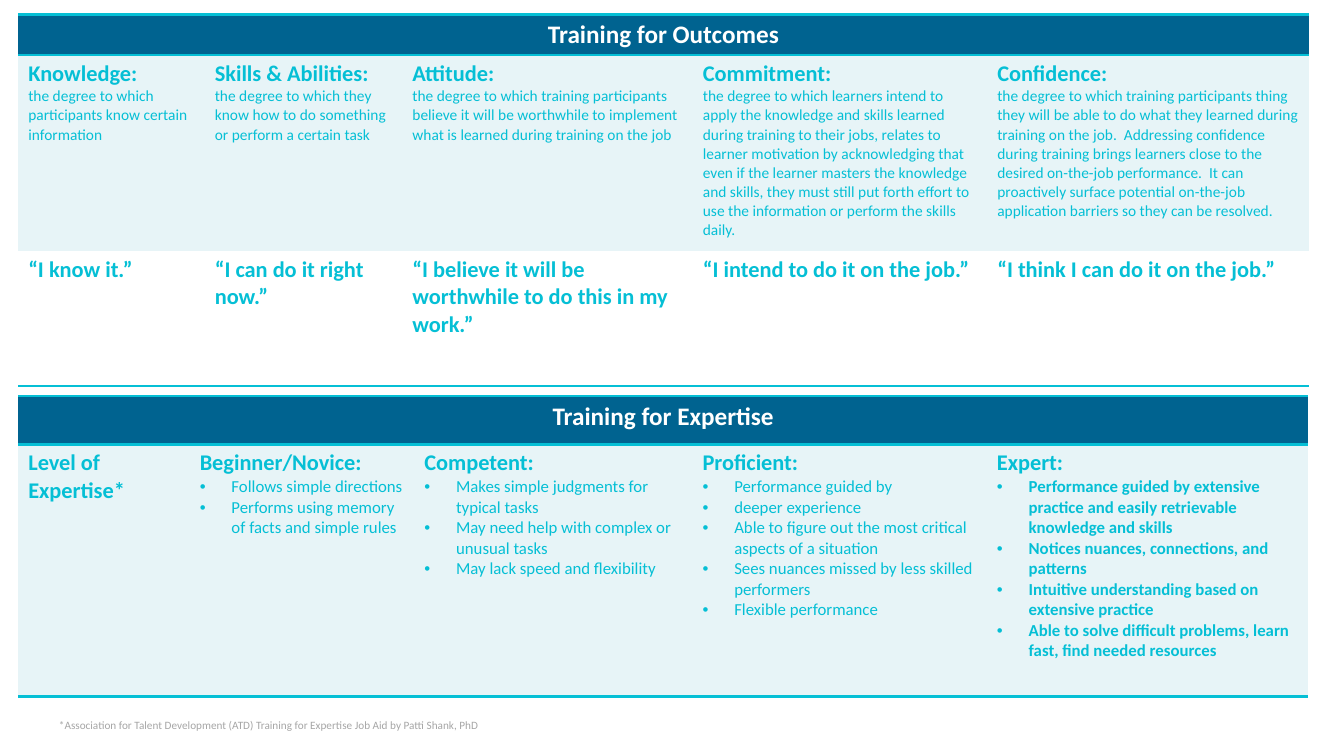
import pptx
import pptx.util
import pptx.dml.color
import pptx.enum.text
import pptx.oxml
import pptx.oxml.ns
from dataclasses import dataclass

Cm = pptx.util.Cm
Pt = pptx.util.Pt
CENTER = pptx.enum.text.PP_ALIGN.CENTER
PLAIN_TABLE = "{2D5ABB26-0587-4C30-8999-92F81FD0307C}"


@dataclass(frozen=True)
class Theme:
    font: str = "Calibri"
    accent: str = "05BFD5"
    header: str = "006390"
    band: str = "E7F4F7"
    white: str = "FFFFFF"
    grey: str = "A6A6A6"
    title: float = 18
    heading: float = 16
    bullet: float = 12
    body: float = 11
    note: float = 8
    rule: float = 2


def rgb(value):
    return pptx.dml.color.RGBColor.from_string(value)


def xml(tag, body="", **attrs):
    """Make one DrawingML element."""
    listed = " ".join(f'{name}="{value}"' for name, value in attrs.items())
    return pptx.oxml.parse_xml(
        f'<a:{tag} {pptx.oxml.ns.nsdecls("a")} {listed}>{body}</a:{tag}>')


class SlideBuilder:
    def __init__(self, prs, theme):
        self.theme = theme
        self.s = prs.slides.add_slide(prs.slide_layouts[6])

    def add_lines(self, tf, lines):
        """Fill a text frame from (text, format) pairs."""
        for i, (text, fmt) in enumerate(lines):
            p = tf.paragraphs[0] if i == 0 else tf.add_paragraph()
            fmt = dict(fmt)
            if fmt.pop("bulleted", False):
                pPr = p._p.get_or_add_pPr()
                pPr.set("marL", str(Cm(0.8)))
                pPr.set("indent", str(-Cm(0.8)))
                pPr.append(xml("buFont", typeface="Arial"))
                pPr.append(xml("buChar", char="•"))
            p.alignment = fmt.pop("align", None)
            r = p.add_run()
            r.text = text
            r.font.color.rgb = rgb(fmt.pop("color", self.theme.accent))
            fmt["name"] = self.theme.font
            for name, value in fmt.items():
                setattr(r.font, name, value)

    def rule(self, cell, *sides):
        """Draw accent borders on the given sides of a cell."""
        fill = f'<a:solidFill><a:srgbClr val="{self.theme.accent}"/></a:solidFill>'
        for side in sides:
            cell._tc.get_or_add_tcPr().append(
                xml(f"ln{side}", fill, w=Pt(self.theme.rule)))

    def table(self, left, top, widths, heights, title, rows):
        """Add a titled table; each row lists the lines of its cells."""
        t = self.theme
        frame = self.s.shapes.add_table(
            len(heights), len(widths), Cm(left), Cm(top),
            Cm(sum(widths)), Cm(sum(heights)))
        tbl = frame.table
        tbl.first_row = tbl.horz_banding = False
        tbl._tbl.tblPr.find(pptx.oxml.ns.qn("a:tableStyleId")).text = PLAIN_TABLE
        for col, width in zip(tbl.columns, widths):
            col.width = Cm(width)
        for row, height in zip(tbl.rows, heights):
            row.height = Cm(height)

        # Borders and fills
        fills = (t.header, t.band, t.white)
        for i in range(len(heights)):
            for j in range(len(widths)):
                cell = tbl.cell(i, j)
                if i == 0:
                    self.rule(cell, "T", "B")
                elif i == len(heights) - 1:
                    self.rule(cell, "B")
                cell.fill.solid()
                cell.fill.fore_color.rgb = rgb(fills[i])

        # Title and contents
        tbl.cell(0, 0).merge(tbl.cell(0, len(widths) - 1))
        self.add_lines(tbl.cell(0, 0).text_frame, [
            (title, dict(size=Pt(t.title), bold=True, color=t.white, align=CENTER))])
        for i, row in enumerate(rows, 1):
            for j, lines in enumerate(row):
                self.add_lines(tbl.cell(i, j).text_frame, lines)

    def note(self, left, top, width, height, text):
        """Add a small centred source note."""
        sp = self.s.shapes.add_textbox(Cm(left), Cm(top), Cm(width), Cm(height))
        sp.text_frame.word_wrap = True
        self.add_lines(sp.text_frame, [
            (text, dict(size=Pt(self.theme.note), color=self.theme.grey, align=CENTER))])


OUTCOMES = [
    ("Knowledge:", "the degree to which participants know certain information",
     "“I know it.”"),
    ("Skills & Abilities:",
     "the degree to which they know how to do something or perform a certain task",
     "“I can do it right now.”"),
    ("Attitude:",
     "the degree to which training participants believe it will be worthwhile to "
     "implement what is learned during training on the job",
     "“I believe it will be worthwhile to do this in my work.”"),
    ("Commitment:",
     "the degree to which learners intend to apply the knowledge and skills learned "
     "during training to their jobs, relates to learner motivation by acknowledging "
     "that even if the learner masters the knowledge and skills, they must still put "
     "forth effort to use the information or perform the skills daily.",
     "“I intend to do it on the job.”"),
    ("Confidence:",
     "the degree to which training participants thing they will be able to do what "
     "they learned during training on the job.  Addressing confidence during training "
     "brings learners close to the desired on-the-job performance.  It can proactively "
     "surface potential on-the-job application barriers so they can be resolved.",
     "“I think I can do it on the job.”"),
]

EXPERTISE = [
    ("Level of Expertise*", []),
    ("Beginner/Novice:", [
        "Follows simple directions",
        "Performs using memory of facts and simple rules"]),
    ("Competent:", [
        "Makes simple judgments for typical tasks",
        "May need help with complex or unusual tasks",
        "May lack speed and flexibility"]),
    ("Proficient:", [
        "Performance guided by",
        "deeper experience",
        "Able to figure out the most critical aspects of a situation",
        "Sees nuances missed by less skilled performers",
        "Flexible performance"]),
    ("Expert:", [
        "Performance guided by extensive practice and easily retrievable knowledge "
        "and skills",
        "Notices nuances, connections, and patterns",
        "Intuitive understanding based on extensive practice",
        "Able to solve difficult problems, learn fast, find needed resources"]),
]


def main():
    prs = pptx.Presentation()
    prs.slide_width, prs.slide_height = Cm(33.87), Cm(19.05)
    theme = Theme()
    slide = SlideBuilder(prs, theme)
    heading = dict(size=Pt(theme.heading), bold=True)
    body = dict(size=Pt(theme.body), bold=False)

    # Expertise levels; the expert column is emphasised
    levels = [
        [(name, heading)] + [
            (text, dict(size=Pt(theme.bullet), bold=name == "Expert:", bulleted=True))
            for text in bullets]
        for name, bullets in EXPERTISE]
    slide.table(0.46, 9.98, [4.32, 5.66, 7.01, 7.42, 8.1], [1.22, 6.35],
                "Training for Expertise", [levels])

    # Source note
    slide.note(0.99, 17.98, 11.58, 0.58,
               "*Association for Talent Development (ATD) Training for Expertise "
               "Job Aid by Patti Shank, PhD")

    # Outcomes and what learners say
    meanings = [[(name, heading), (text, body)] for name, text, _ in OUTCOMES]
    quotes = [[(quote, heading)] for _, _, quote in OUTCOMES]
    slide.table(0.46, 0.36, [4.7, 4.98, 7.32, 7.42, 8.1], [1.02, 4.95, 3.4],
                "Training for Outcomes", [meanings, quotes])

    prs.save("out.pptx")


if __name__ == "__main__":
    main()
